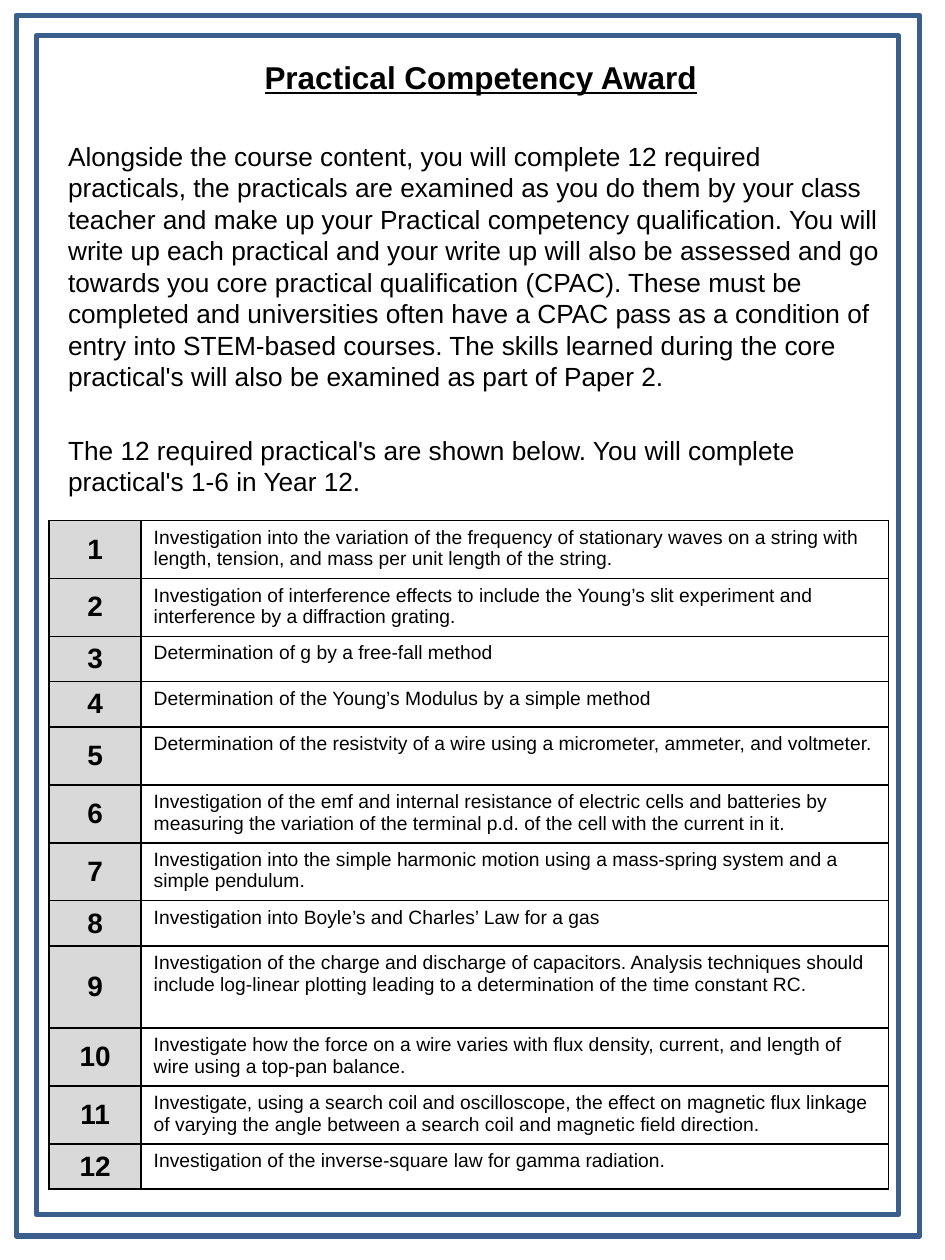
from lxml import etree
from pptx import Presentation
from pptx.dml.color import RGBColor
from pptx.enum import shapes, text
from pptx.oxml.ns import qn
from pptx.util import Inches, Pt

TITLE = "Practical Competency Award"
INTRO = [
    "Alongside the course content, you will complete 12 required practicals, the practicals are "
    "examined as you do them by your class teacher and make up your Practical competency "
    "qualification. You will write up each practical and your write up will also be assessed and "
    "go towards you core practical qualification (CPAC). These must be completed and universities "
    "often have a CPAC pass as a condition of entry into STEM-based courses. The skills learned "
    "during the core practical's will also be examined as part of Paper 2.",
    "The 12 required practical's are shown below. You will complete practical's 1-6 in Year 12.",
]
SHORT, MEDIUM, TALL = 0.36, 0.46, 0.65  # row heights
PRACTICALS = [
    (MEDIUM, "Investigation into the variation of the frequency of stationary waves on a string "
             "with length, tension, and mass per unit length of the string."),
    (MEDIUM, "Investigation of interference effects to include the Young’s slit experiment and "
             "interference by a diffraction grating."),
    (SHORT, "Determination of g by a free-fall method"),
    (SHORT, "Determination of the Young’s Modulus by a simple method"),
    (MEDIUM, "Determination of the resistvity of a wire using a micrometer, ammeter, and voltmeter."),
    (MEDIUM, "Investigation of the emf and internal resistance of electric cells and batteries by "
             "measuring the variation of the terminal p.d. of the cell with the current in it."),
    (MEDIUM, "Investigation into the simple harmonic motion using a mass-spring system and a "
             "simple pendulum."),
    (SHORT, "Investigation into Boyle’s and Charles’ Law for a gas"),
    (TALL, "Investigation of the charge and discharge of capacitors. Analysis techniques should "
           "include log-linear plotting leading to a determination of the time constant RC."),
    (MEDIUM, "Investigate how the force on a wire varies with flux density, current, and length of "
             "wire using a top-pan balance."),
    (MEDIUM, "Investigate, using a search coil and oscilloscope, the effect on magnetic flux "
             "linkage of varying the angle between a search coil and magnetic field direction."),
    (SHORT, "Investigation of the inverse-square law for gamma radiation."),
]
FRAMES = [(0.13, 0.12, 7.17, 9.69), (0.29, 0.28, 6.84, 9.36)]
COLUMNS = [0.73, 5.93]
BLACK, GREY, BLUE = "000000", "D9D9D9", "3A5F8C"


def color(hex_code):
    return RGBColor.from_string(hex_code)


def place(s, left, top, width, height):
    s.left, s.top, s.width, s.height = map(Inches, (left, top, width, height))


def format_paragraph(p, size, align, bold=False):
    p.alignment = align
    p.font.name, p.font.size, p.font.bold = "Arial", Pt(size), bold
    p.font.color.rgb = color(BLACK)


def add_borders(cell):
    """Draw 1 pt black lines on all four sides; they must precede the fill."""
    tc_pr = cell._tc.get_or_add_tcPr()
    for i, side in enumerate(("a:lnL", "a:lnR", "a:lnT", "a:lnB")):
        ln = etree.Element(qn(side), w=str(Pt(1)))
        fill = etree.SubElement(ln, qn("a:solidFill"))
        etree.SubElement(fill, qn("a:srgbClr"), val=BLACK)
        tc_pr.insert(i, ln)


prs = Presentation()
prs.slide_width, prs.slide_height = Inches(7.5), Inches(10)
slide = prs.slides.add_slide(prs.slide_layouts[1])
LEFT, CENTER = text.PP_ALIGN.LEFT, text.PP_ALIGN.CENTER

title, body = slide.placeholders
place(title, 0.44, 0.28, 6.75, 0.66)
title.text_frame.text = TITLE
title.text_frame.auto_size = text.MSO_AUTO_SIZE.NONE
title.text_frame.vertical_anchor = text.MSO_ANCHOR.MIDDLE
p = title.text_frame.paragraphs[0]
format_paragraph(p, 18, CENTER, bold=True)
p.font.underline = True

place(body, 0.44, 1.06, 6.69, 5.1)
tf = body.text_frame
tf.text = "\n".join(INTRO)
tf.auto_size = text.MSO_AUTO_SIZE.NONE
for p, gap in zip(tf.paragraphs, (3, 24)):
    format_paragraph(p, 15, LEFT)
    p.space_before = Pt(gap)
    p_pr = p._p.get_or_add_pPr()
    p_pr.set("marL", "0")
    p_pr.set("indent", "0")
    # The bullet setting comes before the default run properties
    p_pr.find(qn("a:defRPr")).addprevious(etree.Element(qn("a:buNone")))

for frame in FRAMES:
    s = slide.shapes.add_shape(shapes.MSO_SHAPE.RECTANGLE, *map(Inches, frame))
    s.shadow.inherit = False
    s.fill.background()
    s.line.color.rgb = color(BLUE)
    s.line.width = Pt(3)

heights = [height for height, _ in PRACTICALS]
table = slide.shapes.add_table(
    len(PRACTICALS), len(COLUMNS), Inches(0.39), Inches(4.13),
    Inches(sum(COLUMNS)), Inches(sum(heights))).table
table.first_row = table.horz_banding = False
for column, width in zip(table.columns, COLUMNS):
    column.width = Inches(width)
for number, (row, (height, practical)) in enumerate(zip(table.rows, PRACTICALS), 1):
    row.height = Inches(height)
    number_cell, practical_cell = row.cells
    number_cell.text, practical_cell.text = str(number), practical
    number_cell.vertical_anchor = text.MSO_ANCHOR.MIDDLE
    number_cell.fill.solid()
    number_cell.fill.fore_color.rgb = color(GREY)
    practical_cell.fill.background()
    format_paragraph(number_cell.text_frame.paragraphs[0], 16, CENTER, bold=True)
    format_paragraph(practical_cell.text_frame.paragraphs[0], 11, LEFT)
    for cell in row.cells:
        add_borders(cell)

prs.save("out.pptx")
